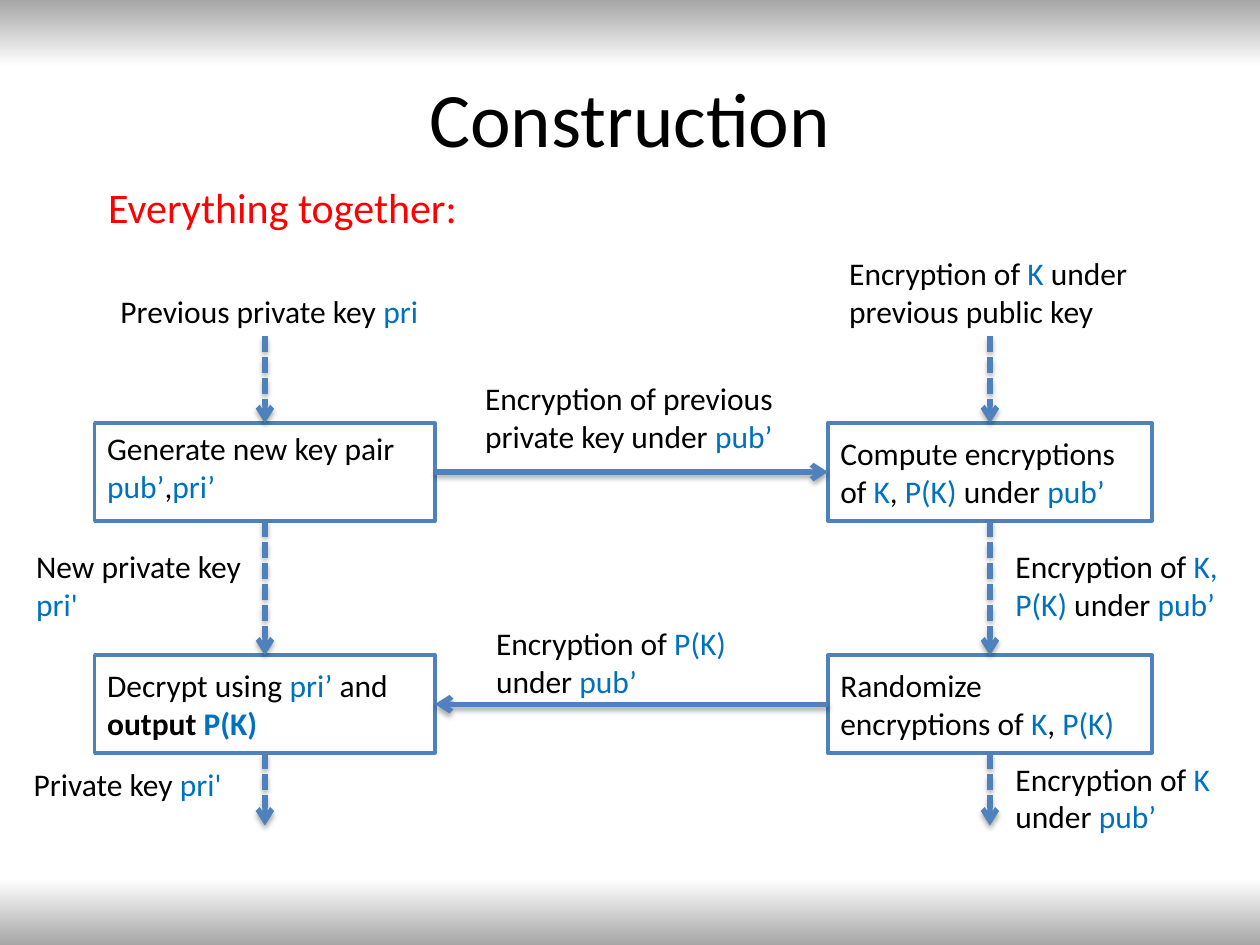
"""Build the Construction slide: a key exchange between two columns of steps."""
import lxml.etree
import pptx
import pptx.dml.color
import pptx.enum.dml
import pptx.enum.shapes
import pptx.enum.text
import pptx.oxml
import pptx.oxml.ns
import pptx.util
from pptx.util import Cm

BLACK = pptx.dml.color.RGBColor(0x00, 0x00, 0x00)
WHITE = pptx.dml.color.RGBColor(0xFF, 0xFF, 0xFF)
RED = pptx.dml.color.RGBColor(0xFF, 0x00, 0x00)
ACCENT = pptx.dml.color.RGBColor(0x00, 0x70, 0xC0)
LINE_BLUE = pptx.dml.color.RGBColor(0x4F, 0x81, 0xBD)
GREY = pptx.dml.color.RGBColor(0xA6, 0xA6, 0xA6)

TOP, LEFT, BOTTOM, RIGHT = range(4)
ANCHOR = pptx.enum.text.MSO_ANCHOR
ALIGN = pptx.enum.text.PP_ALIGN

STEP_TOPS = (8.53, 13.21)
STEP_HEIGHT = 1.97
FLOW_START, FLOW_END = 6.78, 16.64
LEFT_COLUMN = (1.91, 6.86)
RIGHT_COLUMN = (16.69, 6.53)

LABELS = (
    (2.18, 5.77, 6.58, 1.02, "Previous private key |pri|", False),
    (16.87, 5, 6.2, 1.8, "Encryption of |K| under\nprevious public key", False),
    (9.53, 7.52, 6.38, 1.8, "Encryption of previous\nprivate key under |pub’|", False),
    (9.75, 12.45, 5.21, 1.8, "Encryption of |P(K)|\nunder |pub’|", False),
    (20.22, 10.9, 4.8, 1.8, "Encryption of |K,|\n|P(K)| under |pub’|", False),
    (20.22, 15.19, 4.5, 1.8, "Encryption of |K|\nunder |pub’|", False),
    (0.48, 10.9, 4.83, 1.8, "New private key\n|pri'|", True),
    (0.43, 15.29, 4.83, 1.02, "Private key |pri'|", True),
)


def write_text(frame, text, size=18, color=BLACK, align=ALIGN.LEFT, anchor=ANCHOR.TOP, wrap=True):
    """Fill a frame, one paragraph a line; |bars| mark accent colour and *stars* bold."""
    frame.word_wrap = wrap
    frame.vertical_anchor = anchor
    for row, line in enumerate(text.split("\n")):
        para = frame.add_paragraph() if row else frame.paragraphs[0]
        para.alignment = align
        for weight, chunk in enumerate(line.split("*")):
            for tint, words in enumerate(chunk.split("|")):
                if words:
                    span = para.add_run()
                    span.text = words
                    span.font.name = "Calibri"
                    span.font.size = pptx.util.Pt(size)
                    span.font.bold = weight % 2 == 1
                    span.font.color.rgb = ACCENT if tint % 2 else color


def add_label(page, left, top, width, height, text, **text_format):
    """Add a text box."""
    box = page.shapes.add_textbox(Cm(left), Cm(top), Cm(width), Cm(height))
    write_text(box.text_frame, text, **text_format)


def add_step(page, column, top, text, anchor=ANCHOR.MIDDLE):
    """Add an outlined rectangle that holds one step."""
    left, width = column
    box = page.shapes.add_shape(
        pptx.enum.shapes.MSO_SHAPE.RECTANGLE, Cm(left), Cm(top), Cm(width), Cm(STEP_HEIGHT))
    box.shadow.inherit = False
    box.fill.solid()
    box.fill.fore_color.rgb = WHITE
    box.line.color.rgb = LINE_BLUE
    box.line.width = pptx.util.Pt(2)
    write_text(box.text_frame, text, anchor=anchor)
    return box


def add_arrow(page, start, end, dashed=False):
    """Add a shadowed arrow; each end is a (box, side) pair or an (x, y) pair of lengths."""
    arrow = page.shapes.add_connector(pptx.enum.shapes.MSO_CONNECTOR.STRAIGHT, 0, 0, 0, 0)
    if isinstance(start[0], int):
        arrow.begin_x, arrow.begin_y = start
    else:
        arrow.begin_connect(*start)
    if isinstance(end[0], int):
        arrow.end_x, arrow.end_y = end
    else:
        arrow.end_connect(*end)
    arrow.line.color.rgb = LINE_BLUE
    arrow.line.width = pptx.util.Pt(3)
    if dashed:
        arrow.line.dash_style = pptx.enum.dml.MSO_LINE.SQUARE_DOT
    head = lxml.etree.SubElement(arrow.line._get_or_add_ln(), pptx.oxml.ns.qn("a:tailEnd"))
    head.set("type", "arrow")
    arrow._element.spPr.append(pptx.oxml.parse_xml(
        f'<a:effectLst {pptx.oxml.ns.nsdecls("a")}>'
        '<a:outerShdw blurRad="40000" dist="23000" dir="5400000" rotWithShape="0">'
        f'<a:srgbClr val="{BLACK}"><a:alpha val="35000"/></a:srgbClr>'
        '</a:outerShdw></a:effectLst>'))


def add_column_flow(page, upper, lower):
    """Run dashed arrows down through the two steps of a column."""
    center = upper.left + upper.width // 2
    add_arrow(page, (center, Cm(FLOW_START)), (upper, TOP), dashed=True)
    add_arrow(page, (upper, BOTTOM), (lower, TOP), dashed=True)
    add_arrow(page, (lower, BOTTOM), (center, Cm(FLOW_END)), dashed=True)


def paint_background(page):
    """Shade the top and bottom edges of the page with grey."""
    fill = page.background.fill
    fill.gradient()
    fill.gradient_angle = 90
    stops = fill._fill._gradFill.gsLst
    for stop in list(stops):
        stops.remove(stop)
    for percent, color in ((0, GREY), (7, WHITE), (93, WHITE), (100, GREY)):
        stops.append(pptx.oxml.parse_xml(
            f'<a:gs {pptx.oxml.ns.nsdecls("a")} pos="{percent * 1000}">'
            f'<a:srgbClr val="{color}"/></a:gs>'))


def main():
    """Build and save the deck."""
    deck = pptx.Presentation()
    deck.slide_width, deck.slide_height = Cm(25.4), Cm(19.05)
    page = deck.slides.add_slide(deck.slide_layouts[6])
    paint_background(page)
    add_label(page, 1.27, 0.76, 22.86, 3.18, "Construction",
              size=44, align=ALIGN.CENTER, anchor=ANCHOR.MIDDLE)
    add_label(page, 1.93, 3.53, 7.62, 1.3, "Everything together:",
              size=24, color=RED, wrap=False)

    first_row, second_row = STEP_TOPS
    generate = add_step(page, LEFT_COLUMN, first_row,
                        "Generate new key pair |pub’|,|pri’|", anchor=ANCHOR.TOP)
    compute = add_step(page, RIGHT_COLUMN, first_row,
                       "Compute encryptions of |K|, |P(K) |under |pub’|")
    randomize = add_step(page, RIGHT_COLUMN, second_row,
                         "Randomize encryptions of |K|, |P(K)|")
    decrypt = add_step(page, LEFT_COLUMN, second_row,
                       "Decrypt using |pri’ |and *output |P(K)|*")

    add_arrow(page, (generate, RIGHT), (compute, LEFT))
    add_arrow(page, (randomize, LEFT), (decrypt, RIGHT))
    add_column_flow(page, generate, decrypt)
    add_column_flow(page, compute, randomize)
    for left, top, width, height, text, wrap in LABELS:
        add_label(page, left, top, width, height, text, wrap=wrap)
    deck.save("out.pptx")


if __name__ == "__main__":
    main()
